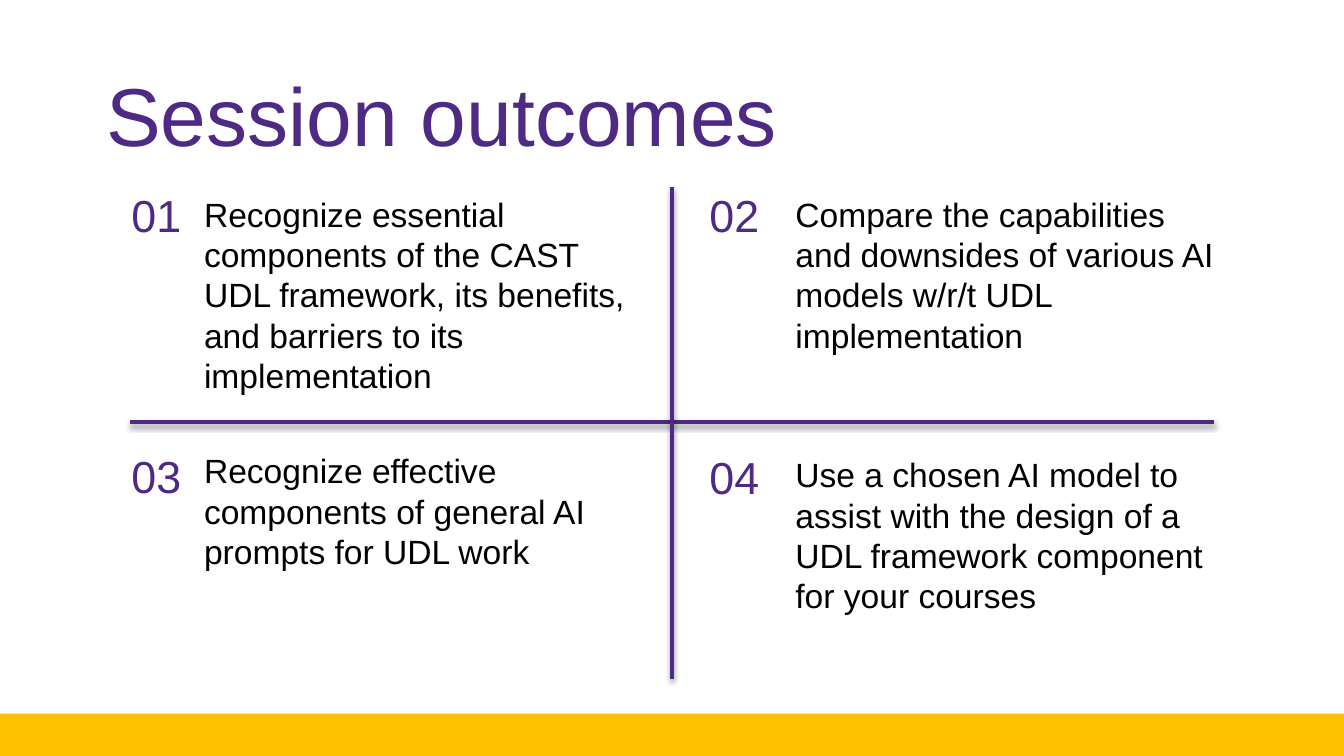
"""Build the session outcomes slide: four numbered goals around a cross."""
from lxml import etree
from pptx import Presentation, util as u
from pptx.dml.color import RGBColor
from pptx.enum import shapes, text
from pptx.oxml.ns import qn

TITLE = "Session outcomes"
GOALS = [
    ("Recognize essential components of the CAST UDL framework, its benefits, "
     "and barriers to its implementation", 1.35, 1.39, 1.62),
    ("Compare the capabilities and downsides of various AI models w/r/t UDL "
     "implementation", 1.35, 1.39, 1.31),
    ("Recognize effective components of general AI prompts for UDL work",
     3.29, 3.3, 1.01),
    ("Use a chosen AI model to assist with the design of a UDL framework "
     "component for your courses", 3.3, 3.33, 1.31),
]
WIDE = 10
HIGH = WIDE * 9 / 16
COLS = [(0.88, 1.42), (5.18, 5.82)]
RULES = [(0.97, 3.14, 9.03, 3.14), (5, 1.39, 5, 5.05)]
BAND = (-0.03, 5.31, 10.03, 0.32)
THEME = {
    "font": "Arial",
    "plum": RGBColor.from_string("4E2A84"),
    "gold": RGBColor.from_string("FFC000"),
    "ink": RGBColor.from_string("000000"),
    "title": 44, "num": 24, "body": 18, "rule": 2,
}


def apply(item, vals):
    """Set each named value on the item."""
    for key, val in vals.items():
        setattr(item, key, val)


def write(shape, words, size, hue, **frame):
    """Put one styled, left-aligned paragraph in the shape."""
    apply(shape.text_frame, frame)
    para = shape.text_frame.paragraphs[0]
    para.text = words
    para.alignment = text.PP_ALIGN.LEFT
    apply(para.runs[0].font, {"name": THEME["font"], "size": u.Pt(THEME[size])})
    para.runs[0].font.color.rgb = THEME[hue]


def label(slide, box, words, size, hue, wrap):
    """Add a text box that grows with its words."""
    shape = slide.shapes.add_textbox(*map(u.Inches, box))
    write(shape, words, size, hue, word_wrap=wrap,
          auto_size=text.MSO_AUTO_SIZE.SHAPE_TO_FIT_TEXT)


def rule(slide, ends):
    """Add a straight line with a soft shadow below it."""
    line = slide.shapes.add_connector(
        shapes.MSO_CONNECTOR.STRAIGHT, *map(u.Inches, ends))
    line.line.color.rgb = THEME["plum"]
    line.line.width = u.Pt(THEME["rule"])
    glow = etree.SubElement(line._element.spPr, qn("a:effectLst"))
    shade = etree.SubElement(
        glow, qn("a:outerShdw"), blurRad=str(u.Pt(3.1)), dist=str(u.Pt(1.6)),
        dir="5400000", rotWithShape="0")
    tone = etree.SubElement(shade, qn("a:srgbClr"), val=str(THEME["ink"]))
    etree.SubElement(tone, qn("a:alpha"), val="38000")


def main():
    """Lay out and save the slide."""
    deck = Presentation()
    apply(deck, {"slide_width": u.Inches(WIDE), "slide_height": u.Inches(HIGH)})
    slide = deck.slides.add_slide(deck.slide_layouts[5])

    band = slide.shapes.add_shape(
        shapes.MSO_SHAPE.RECTANGLE, *map(u.Inches, BAND))
    band.shadow.inherit = False
    band.fill.solid()
    band.fill.fore_color.rgb = THEME["gold"]
    band.line.fill.background()

    head = slide.shapes.title
    apply(head, {"left": u.Inches(0.69), "top": u.Inches(0.3),
                 "width": u.Inches(8.62), "height": u.Inches(1.09)})
    write(head, TITLE, "title", "plum", word_wrap=True,
          auto_size=text.MSO_AUTO_SIZE.NONE,
          vertical_anchor=text.MSO_ANCHOR.MIDDLE)

    for ends in RULES:
        rule(slide, ends)
    for idx, (goal, num_top, top, tall) in enumerate(GOALS):
        num_left, left = COLS[idx % len(COLS)]
        label(slide, (num_left, num_top, 0.58, 0.5), f"{idx + 1:02}",
              "num", "plum", False)
        label(slide, (left, top, 3.4, tall), goal, "body", "ink", True)

    deck.save("out.pptx")


if __name__ == "__main__":
    main()
